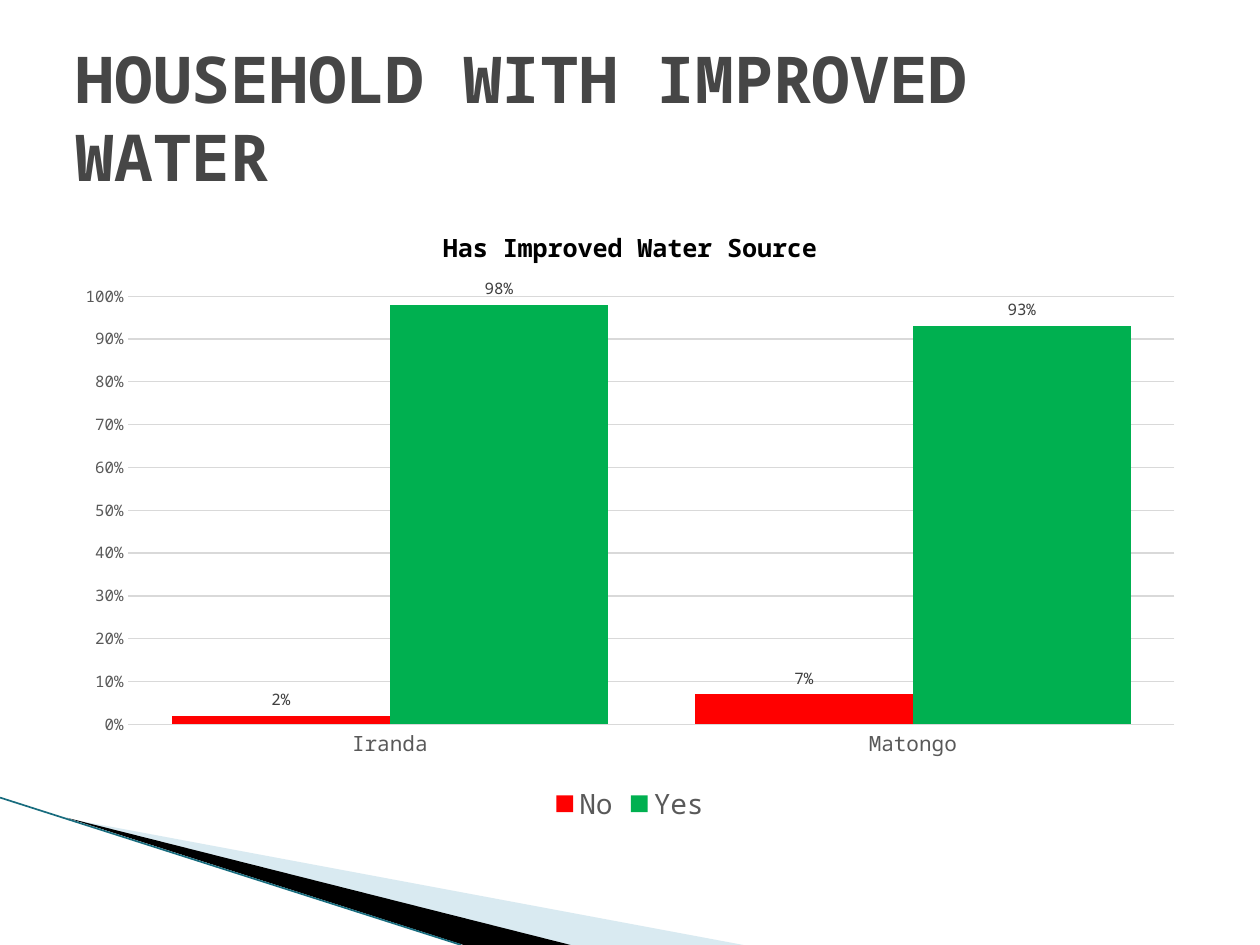
from lxml import etree
from pptx import Presentation
from pptx import util as u
from pptx.chart import data as cd
from pptx.dml import color as col
from pptx.enum import chart as ch, shapes, text
from pptx.oxml import ns

WIDE, HIGH = 10, 7.5
FACE = "Noto Sans Mono"


def rgb(tone):
    """Turn a hex string into a colour."""
    return col.RGBColor.from_string(tone)


def put(item, **vals):
    """Set each named value on an item."""
    for key, val in vals.items():
        setattr(item, key, val)


def style(font, size, tone, bold=False):
    """Format a font."""
    put(font, name=FACE, size=u.Pt(size), bold=bold)
    font.color.rgb = rgb(tone)


def stroke(line, tone, size):
    """Format a line."""
    line.color.rgb = rgb(tone)
    line.width = u.Pt(size)


def head(slide, words):
    """Place and fill the slide title."""
    box = slide.shapes.title
    put(box, left=u.Inches(0.05 * WIDE), top=u.Inches(0.04 * HIGH),
        width=u.Inches(0.9 * WIDE), height=u.Inches(1.25))
    frame = box.text_frame
    put(frame, text=words, word_wrap=True, auto_size=text.MSO_AUTO_SIZE.NONE,
        vertical_anchor=text.MSO_ANCHOR.MIDDLE)
    para = frame.paragraphs[0]
    put(para, alignment=text.PP_ALIGN.LEFT, line_spacing=1.0)
    style(para.runs[0].font, 36.9, "464646", True)


def wedge(slide, dots, tone, alpha=100):
    """Draw a filled outline through points in inches."""
    first, *rest = [(u.Inches(x), u.Inches(y)) for x, y in dots]
    pen = slide.shapes.build_freeform(*first)
    pen.add_line_segments(rest, close=True)
    shape = pen.convert_to_shape()
    shape.shadow.inherit = False
    shape.fill.solid()
    shape.fill.fore_color.rgb = rgb(tone)
    shape.line.fill.background()
    if alpha < 100:
        hue = shape.fill._xPr.find(".//" + ns.qn("a:srgbClr"))
        etree.SubElement(hue, ns.qn("a:alpha"), val=str(alpha * 1000))


def edge(slide, start, end, tone, size):
    """Draw a straight line between points in inches."""
    ends = [u.Inches(val) for val in start + end]
    line = slide.shapes.add_connector(shapes.MSO_CONNECTOR.STRAIGHT, *ends)
    stroke(line.line, tone, size)
    etree.SubElement(line._element.spPr, ns.qn("a:effectLst"))


def axes(chart):
    """Format both axes."""
    cat, val = chart.category_axis, chart.value_axis
    for axis, size in ((cat, 12), (val, 9)):
        put(axis, major_tick_mark=ch.XL_TICK_MARK.NONE,
            minor_tick_mark=ch.XL_TICK_MARK.NONE)
        style(axis.tick_labels.font, size, "595959")
    stroke(cat.format.line, "D9D9D9", 0.75)
    put(val, minimum_scale=0, maximum_scale=1, major_unit=0.1,
        has_major_gridlines=True)
    put(val.tick_labels, number_format="0%", number_format_is_linked=False)
    val.format.line.fill.background()
    stroke(val.major_gridlines.format.line, "D9D9D9", 0.75)


def bars(chart, tones):
    """Format the columns and their labels."""
    plot = chart.plots[0]
    put(plot, gap_width=40, overlap=0, vary_by_categories=False)
    for row, tone in zip(plot.series, tones):
        row.format.fill.solid()
        row.format.fill.fore_color.rgb = rgb(tone)
        row.invert_if_negative = False
        put(row.data_labels, show_value=True, number_format="0%",
            number_format_is_linked=False,
            position=ch.XL_LABEL_POSITION.OUTSIDE_END)
        style(row.data_labels.font, 9, "404040")


def graph(slide, name, cats, rows):
    """Add the column chart with its title and legend."""
    data = cd.CategoryChartData(number_format="0%")
    data.categories = cats
    for key, vals, _ in rows:
        data.add_series(key, vals)
    area = [u.Inches(val) for val in (0.05 * WIDE, 1.62, 0.9 * WIDE, 4.95)]
    chart = slide.shapes.add_chart(
        ch.XL_CHART_TYPE.COLUMN_CLUSTERED, *area, data).chart
    style(chart.font, 10, "000000")
    put(chart, has_title=True, has_legend=True)
    chart.chart_title.text_frame.text = name
    run = chart.chart_title.text_frame.paragraphs[0].runs[0]
    style(run.font, 14.4, "000000", True)
    chart.chart_title.include_in_layout = False
    put(chart.legend, position=ch.XL_LEGEND_POSITION.BOTTOM,
        include_in_layout=False)
    style(chart.legend.font, 16, "595959")
    axes(chart)
    bars(chart, [tone for _, _, tone in rows])


def main():
    """Build and save the slide."""
    deck = Presentation()
    put(deck, slide_width=u.Inches(WIDE), slide_height=u.Inches(HIGH))
    slide = deck.slides.add_slide(deck.slide_layouts[5])
    wedge(slide, [(0.55, 6.5), (5.9, HIGH), (4.52, HIGH)], "A0CBDC", 40)
    wedge(slide, [(0.53, 6.49), (4.53, HIGH), (3.68, HIGH)], "000000")
    edge(slide, (0, 6.33), (3.66, HIGH), "186C7E", 0.95)
    head(slide, "HOUSEHOLD WITH IMPROVED WATER")
    graph(slide, "Has Improved Water Source", ["Iranda", "Matongo"],
          [("No", (0.02, 0.07), "FF0000"), ("Yes", (0.98, 0.93), "00B050")])
    deck.save("out.pptx")


if __name__ == "__main__":
    main()
